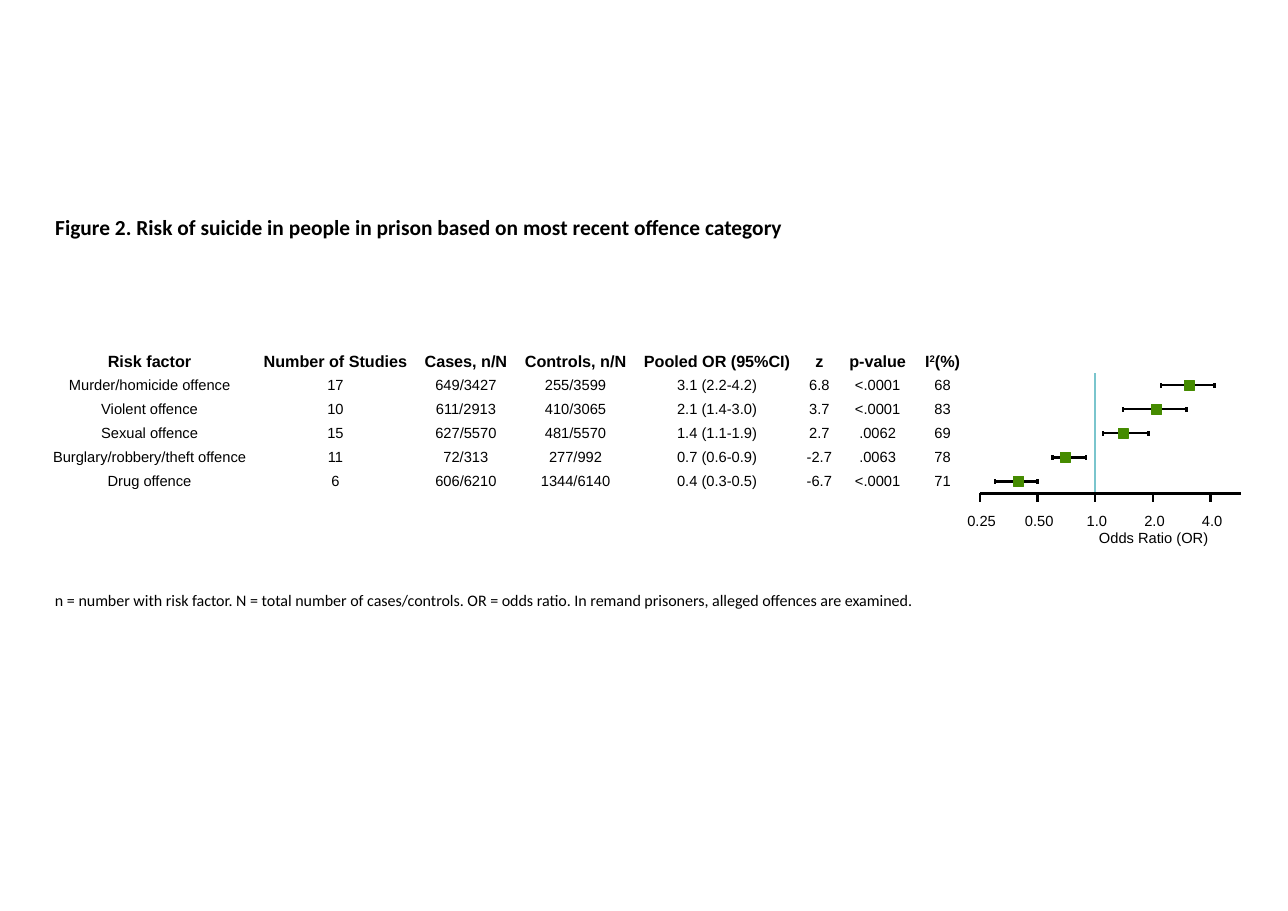
from math import log2

from lxml.etree import SubElement
from pptx import Presentation
from pptx.dml.color import RGBColor
from pptx.enum.shapes import MSO_CONNECTOR, MSO_SHAPE
from pptx.enum.text import MSO_ANCHOR, MSO_AUTO_SIZE, PP_ALIGN
from pptx.oxml.ns import qn
from pptx.util import Cm, Pt

BLACK, TEAL, GREEN = "000000", "7AC5CD", "458B00"
HEADERS = ["Risk factor", "Number of Studies", "Cases, n/N", "Controls, n/N",
           "Pooled OR (95%CI)", "z", "p-value", "I2(%)"]
COL_WIDTHS = [4.62, 3.96, 2.06, 3, 3.53, 1.19, 1.5, 1.5]
OFFENCES = [
    ("Murder/homicide offence", "17", "649/3427", "255/3599", (3.1, 2.2, 4.2), "6.8", "<.0001", "68"),
    ("Violent offence", "10", "611/2913", "410/3065", (2.1, 1.4, 3.0), "3.7", "<.0001", "83"),
    ("Sexual offence", "15", "627/5570", "481/5570", (1.4, 1.1, 1.9), "2.7", ".0062", "69"),
    ("Burglary/robbery/theft offence", "11", "72/313", "277/992", (0.7, 0.6, 0.9), "-2.7", ".0063", "78"),
    ("Drug offence", "6", "606/6210", "1344/6140", (0.4, 0.3, 0.5), "-6.7", "<.0001", "71"),
]
TICKS = ["0.25", "0.50", "1.0", "2.0", "4.0"]


def rgb(value):
    """Turn a hex string into a colour."""
    return RGBColor.from_string(value)


def style(p, size, name="Arial", bold=False, align=PP_ALIGN.CENTER):
    """Set the font and alignment of a paragraph."""
    p.alignment = align
    p.font.size, p.font.name, p.font.bold = Pt(size), name, bold
    p.font.color.rgb = rgb(BLACK)


def add_text(s, x, y, w, h, text, size, name="Arial", align=PP_ALIGN.CENTER):
    """Add a vertically centred line of text."""
    tf = s.shapes.add_textbox(Cm(x), Cm(y), Cm(w), Cm(h)).text_frame
    tf.word_wrap = True
    tf.vertical_anchor = MSO_ANCHOR.MIDDLE
    tf.margin_top = tf.margin_bottom = 0
    p = tf.paragraphs[0]
    p.text = text
    style(p, size, name, align=align)


def add_line(s, x1, y1, x2, y2, color=BLACK):
    """Add a straight line without a shadow."""
    c = s.shapes.add_connector(MSO_CONNECTOR.STRAIGHT, Cm(x1), Cm(y1), Cm(x2), Cm(y2))
    c.line.color.rgb = rgb(color)
    c.line.width = Pt(1.5)
    SubElement(c._element.spPr, qn("a:effectLst"))


def add_title(s, x, y, w, h, text):
    """Place the figure title in the title placeholder."""
    sp = s.shapes.title
    sp.left, sp.top, sp.width, sp.height = Cm(x), Cm(y), Cm(w), Cm(h)
    tf = sp.text_frame
    tf.auto_size = MSO_AUTO_SIZE.NONE
    tf.vertical_anchor = MSO_ANCHOR.MIDDLE
    p = tf.paragraphs[0]
    p.text = text
    style(p, 14, "Calibri", True, PP_ALIGN.LEFT)


def fill_cell(cell, text, header):
    """Write one unfilled table cell, raising the 2 of the I2 heading."""
    cell.fill.background()
    cell.margin_left = cell.margin_right = cell.margin_top = cell.margin_bottom = 0
    cell.vertical_anchor = MSO_ANCHOR.MIDDLE
    p = cell.text_frame.paragraphs[0]
    for part in ("I", "2", "(%)") if text == "I2(%)" else (text,):
        r = p.add_run()
        r.text = part
        if header and part == "2":
            r._r.get_or_add_rPr().set("baseline", "30000")
    style(p, 10.6 if header else 9.6, bold=header)


def add_risk_table(s, x, y, h):
    """Add the table of pooled results by offence."""
    n = len(OFFENCES) + 1
    table = s.shapes.add_table(n, len(HEADERS), Cm(x), Cm(y), Cm(sum(COL_WIDTHS)), Cm(h)).table
    table.first_row = table.horz_banding = False
    for col, width in zip(table.columns, COL_WIDTHS):
        col.width = Cm(width)
    for i, values in enumerate([HEADERS, *OFFENCES]):
        table.rows[i].height = Cm(h / n)
        for j, value in enumerate(values):
            text = "{} ({}-{})".format(*value) if isinstance(value, tuple) else value
            fill_cell(table.cell(i, j), text, i == 0)


def add_forest_plot(s, x, y, w, h):
    """Draw odds ratios with confidence intervals on a log2 axis."""
    step, marker, cap, axis = 1.33, 0.23, 0.05, y + h

    def pos(ratio):
        """Give the horizontal place of an odds ratio."""
        return x + step * log2(ratio / float(TICKS[0]))

    add_line(s, pos(1), axis, pos(1), y, TEAL)
    add_line(s, x, axis, x + w, axis)
    for tick in TICKS:
        tx = pos(float(tick))
        add_line(s, tx, axis, tx, axis + 0.2)
        add_text(s, tx - 0.71, axis + 0.37, 1.5, 0.5, tick, 9.6)
    add_text(s, pos(2) - 1.98, axis + 0.77, 4, 0.5, "Odds Ratio (OR)", 9.6)

    pitch = h / len(OFFENCES)
    for i, offence in enumerate(OFFENCES):
        ratio, low, high = offence[4]
        cy = y + (i + 0.5) * pitch
        add_line(s, pos(low), cy, pos(high), cy)
        for end in (low, high):
            add_line(s, pos(end), cy - cap, pos(end), cy + cap)
        sp = s.shapes.add_shape(MSO_SHAPE.RECTANGLE, Cm(pos(ratio) - marker / 2),
                                Cm(cy - marker / 2), Cm(marker), Cm(marker))
        sp.shadow.inherit = False
        sp.fill.solid()
        sp.fill.fore_color.rgb = sp.line.color.rgb = rgb(GREEN)
        sp.line.width = Pt(0.75)


def main():
    """Build and save the slide."""
    prs = Presentation()
    prs.slide_width, prs.slide_height = Cm(29.72), Cm(21.01)
    s = prs.slides.add_slide(prs.slide_layouts[5])
    add_title(s, 1.02, 4.8, 27.6, 0.86,
              "Figure 2. Risk of suicide in people in prison based on most recent offence category")
    add_risk_table(s, 1.14, 8.06, 3.32)
    add_forest_plot(s, 22.61, 8.61, 6.02, 2.77)
    add_text(s, 1.02, 13.49, 27.6, 0.71,
             "n = number with risk factor. N = total number of cases/controls. OR = odds ratio. "
             "In remand prisoners, alleged offences are examined.", 10.5, "Calibri", PP_ALIGN.LEFT)
    prs.save("out.pptx")


if __name__ == "__main__":
    main()
